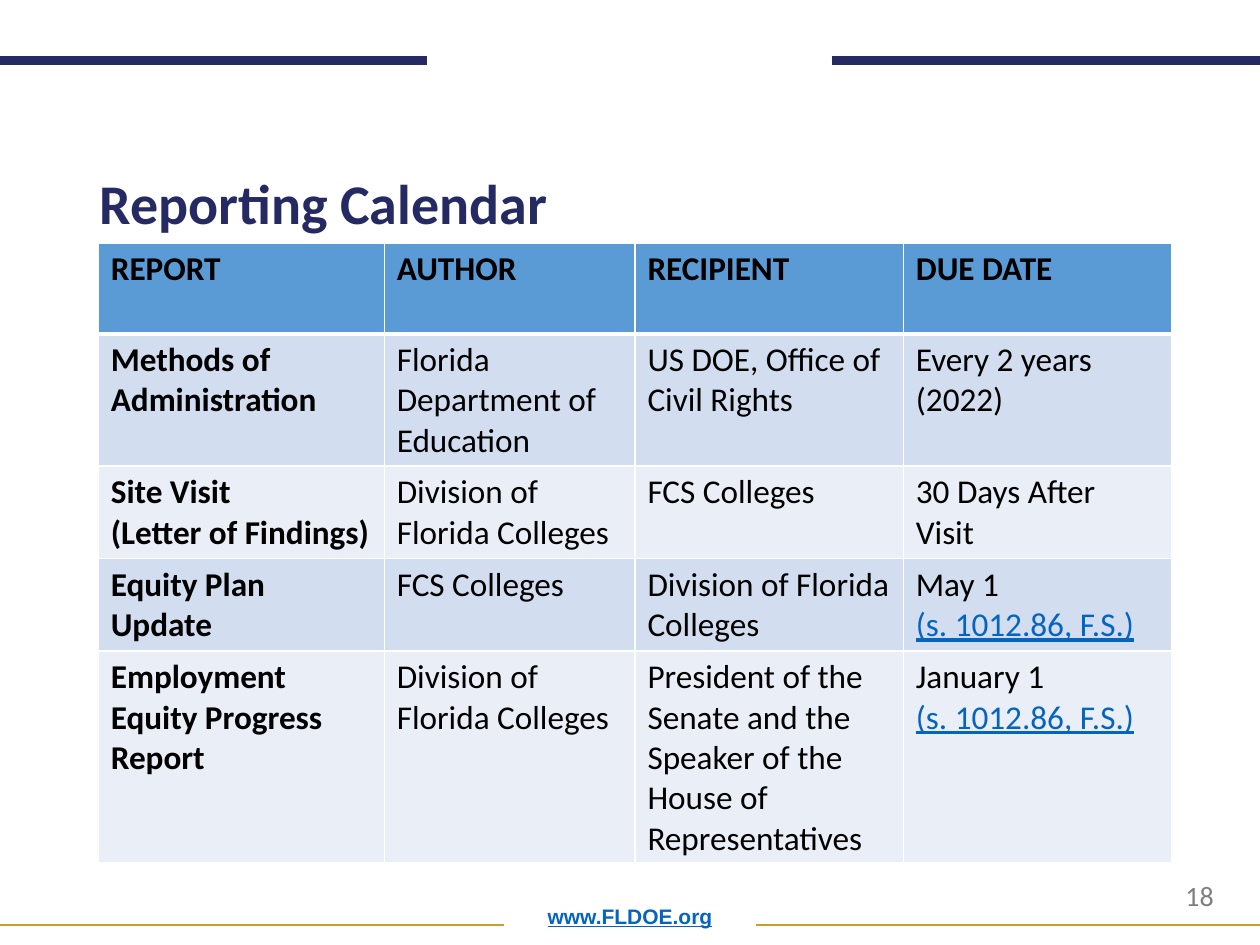
"""Build the reporting calendar slide."""
from dataclasses import dataclass

from lxml import etree
from pptx import Presentation
from pptx.dml.color import RGBColor
from pptx.enum.shapes import MSO_CONNECTOR
from pptx.enum.text import MSO_ANCHOR, MSO_AUTO_SIZE, PP_ALIGN
from pptx.oxml.ns import qn
from pptx.util import Inches, Pt

STRAIGHT = MSO_CONNECTOR.STRAIGHT
TOP, BOTTOM = MSO_ANCHOR.TOP, MSO_ANCHOR.BOTTOM
LEFT, CENTER = PP_ALIGN.LEFT, PP_ALIGN.CENTER
FIT_SHAPE = MSO_AUTO_SIZE.SHAPE_TO_FIT_TEXT
NAVY, GOLD, LINK, GRAY = "262A63", "CD9D2C", "0563C1", "7F7F7F"
BLACK, WHITE, HEADER = "000000", "FFFFFF", "5B9BD5"
BANDS = ("D2DEEF", "EAEFF7")
STATUTE = "(s. 1012.86, F.S.)"

COLUMNS = (2.27, 1.99, 2.13, 2.13)
HEIGHTS = (0.72, 1.03, 0.72, 0.72, 1.66)
ROWS = (
    ("REPORT", "AUTHOR", "RECIPIENT", "DUE DATE"),
    ("Methods of Administration", "Florida Department of Education",
     "US DOE, Office of Civil Rights", "Every 2 years (2022)"),
    ("Site Visit\n(Letter of Findings)", "Division of Florida Colleges",
     "FCS Colleges", "30 Days After Visit"),
    ("Equity Plan Update", "FCS Colleges", "Division of Florida Colleges",
     f"May 1\n{STATUTE}"),
    ("Employment Equity Progress Report", "Division of Florida Colleges",
     "President of the Senate and the Speaker of the House of Representatives",
     f"January 1\n{STATUTE}"),
)


@dataclass
class Rule:
    """A horizontal line across part of the slide."""
    start: float
    end: float
    y: float
    color: str
    width: float


@dataclass
class Label:
    """A text box with one formatted line."""
    text: str
    box: tuple
    font: dict
    color: str
    anchor: MSO_ANCHOR = TOP
    align: PP_ALIGN = LEFT
    spacing: float = 1.0


RULES = (
    Rule(0, 4, 7.34, GOLD, 1),
    Rule(0, 3.39, 0.48, NAVY, 5),
    Rule(6.6, 10, 0.48, NAVY, 5),
    Rule(6, 10, 7.34, GOLD, 1),
)
LABELS = (
    Label("www.FLDOE.org", (0.69, 7, 8.62, 0.42),
          dict(name="Arial", size=Pt(12), bold=True, underline=True),
          LINK, BOTTOM, CENTER, 0.9),
    Label("18", (9.31, 6.92, 0.65, 0.37), dict(name="Calibri", size=Pt(16)), GRAY),
    Label("Reporting Calendar", (0.69, 1.06, 8.62, 0.87),
          dict(name="Calibri", size=Pt(32), bold=True), NAVY, BOTTOM, LEFT, 0.9),
)


def rgb(color: str) -> RGBColor:
    """Turn a hex string into a colour."""
    return RGBColor.from_string(color)


def add_run(p, text: str, font: dict, color: str) -> None:
    """Add a formatted run to a paragraph."""
    r = p.add_run()
    r.text = text
    for name, value in font.items():
        setattr(r.font, name, value)
    r.font.color.rgb = rgb(color)


def add_rule(s, rule: Rule) -> None:
    """Draw a horizontal rule without a shadow."""
    y = Inches(rule.y)
    line = s.shapes.add_connector(STRAIGHT, Inches(rule.start), y, Inches(rule.end), y)
    line.line.color.rgb = rgb(rule.color)
    line.line.width = Pt(rule.width)
    etree.SubElement(line._element.spPr, qn("a:effectLst"))


def add_label(s, label: Label) -> None:
    """Draw a text box."""
    sp = s.shapes.add_textbox(*map(Inches, label.box))
    tf = sp.text_frame
    tf.word_wrap = True
    tf.vertical_anchor = label.anchor
    if label.anchor == TOP:
        tf.auto_size = FIT_SHAPE
    p = tf.paragraphs[0]
    p.alignment = label.align
    p.line_spacing = label.spacing
    add_run(p, label.text, label.font, label.color)


def set_borders(cell, top: float, bottom: float) -> None:
    """Give a cell white borders, with the top and bottom widths in points."""
    tc_pr = cell._tc.get_or_add_tcPr()
    for side, width in (("L", 1), ("R", 1), ("T", top), ("B", bottom)):
        ln = etree.SubElement(tc_pr, qn(f"a:ln{side}"), w=str(Pt(width)))
        fill = etree.SubElement(ln, qn("a:solidFill"))
        etree.SubElement(fill, qn("a:srgbClr"), val=WHITE)


def fill_cell(cell, text: str, row: int, col: int) -> None:
    """Write and format one table cell."""
    set_borders(cell, 3 if row == 1 else 1, 3 if row == 0 else 1)
    cell.fill.solid()
    cell.fill.fore_color.rgb = rgb(BANDS[(row - 1) % 2] if row else HEADER)
    tf = cell.text_frame
    for i, part in enumerate(text.split("\n")):
        p = tf.add_paragraph() if i else tf.paragraphs[0]
        linked = part == STATUTE
        font = dict(name="Calibri", size=Pt(19), bold=row == 0 or col == 0,
                    underline=linked)
        add_run(p, part, font, LINK if linked else BLACK)


def add_calendar(s) -> None:
    """Draw the reporting table."""
    box = (0.78, 1.93, sum(COLUMNS), sum(HEIGHTS))
    table = s.shapes.add_table(len(ROWS), len(COLUMNS), *map(Inches, box)).table
    for column, width in zip(table.columns, COLUMNS):
        column.width = Inches(width)
    for row, (height, texts) in enumerate(zip(HEIGHTS, ROWS)):
        table.rows[row].height = Inches(height)
        for col, text in enumerate(texts):
            fill_cell(table.cell(row, col), text, row, col)


def main() -> None:
    """Build and save the slide."""
    prs = Presentation()
    prs.slide_width, prs.slide_height = Inches(10), Inches(7.5)
    s = prs.slides.add_slide(prs.slide_layouts[6])
    for rule in RULES:
        add_rule(s, rule)
    for label in LABELS:
        add_label(s, label)
    add_calendar(s)
    prs.save("out.pptx")


if __name__ == "__main__":
    main()
